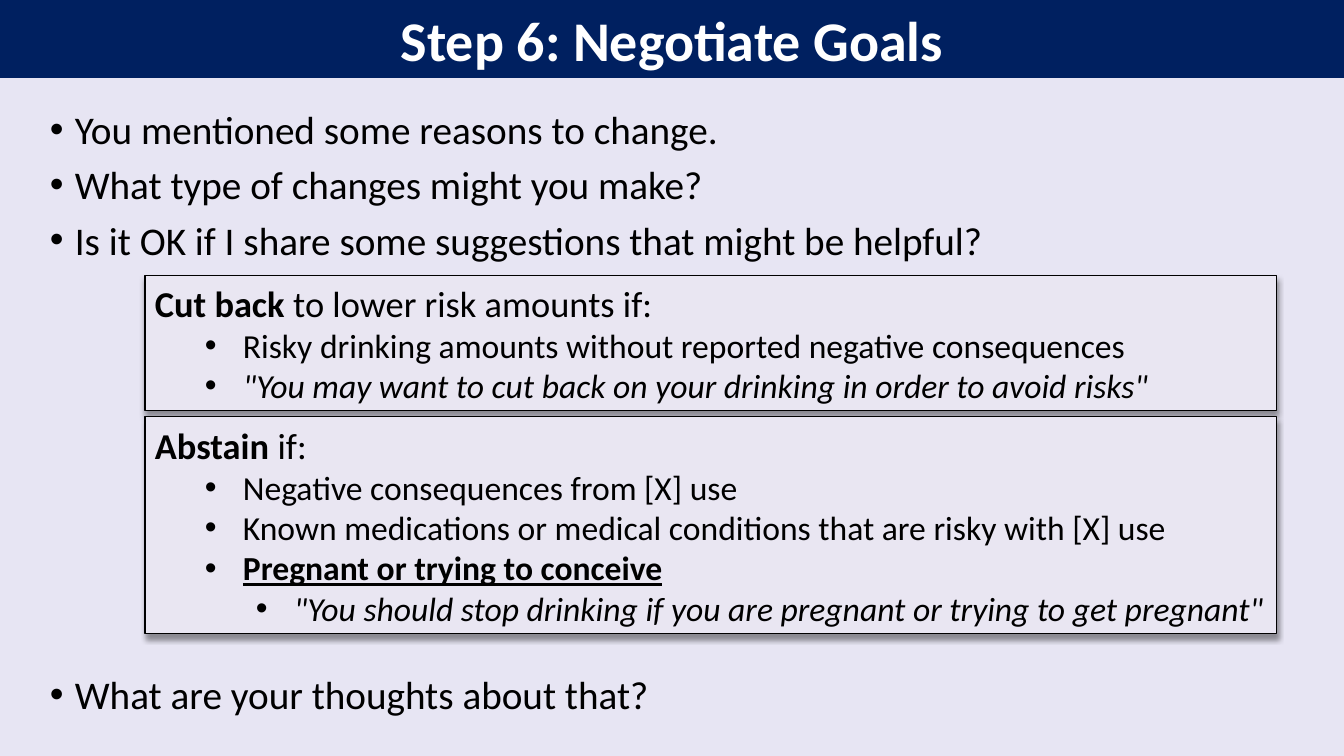
from lxml import etree
from pptx import Presentation
from pptx.dml.color import RGBColor
from pptx.enum.shapes import MSO_SHAPE
from pptx.enum.text import MSO_ANCHOR, MSO_AUTO_SIZE, PP_ALIGN
from pptx.oxml.ns import qn
from pptx.util import Pt

RECTANGLE = MSO_SHAPE.RECTANGLE
TOP, MIDDLE = MSO_ANCHOR.TOP, MSO_ANCHOR.MIDDLE
LEFT, CENTER = PP_ALIGN.LEFT, PP_ALIGN.CENTER
NO_FIT = MSO_AUTO_SIZE.NONE
TITLE_ONLY = 5
WIDTH, HEIGHT = 1344, 756
SCALE = 12192000 / WIDTH
FONT = "Calibri"
COLORS = {"page": "E7E5F3", "banner": "002060", "panel": "E9E6F2",
          "ink": "000000", "white": "FFFFFF"}
INDENTS = {1: (88, -38), 2: (139, -38)}
PROMPT_INDENT = (25, -25)


def px(length):
    return round(length * SCALE)


def color(name):
    return RGBColor.from_string(COLORS[name])


class GoalSlide:
    def __init__(self, deck):
        self.page = deck.slides.add_slide(deck.slide_layouts[TITLE_ONLY])
        background = self.page.background.fill
        background.solid()
        background.fore_color.rgb = color("page")

    def set_frame(self, box, anchor):
        frame = box.text_frame
        frame.word_wrap = True
        frame.auto_size = NO_FIT
        frame.vertical_anchor = anchor
        return frame

    def add_span(self, para, text, size, ink="ink", bold=False, italic=False, underline=False):
        span = para.add_run()
        span.text = text
        font = span.font
        font.name, font.size = FONT, Pt(size)
        font.bold, font.italic, font.underline = bold, italic, underline
        font.color.rgb = color(ink)

    def add_bullet(self, para, indent):
        margin, hanging = indent
        properties = para._p.get_or_add_pPr()
        properties.set("marL", str(px(margin)))
        properties.set("indent", str(px(hanging)))
        etree.SubElement(properties, qn("a:buFont"), typeface="Arial")
        etree.SubElement(properties, qn("a:buChar"), char="•")

    def add_shadow(self, box):
        box.shadow.inherit = False
        effects = box._element.spPr.find(qn("a:effectLst"))
        shadow = etree.SubElement(effects, qn("a:outerShdw"), blurRad=str(Pt(4)),
                                  dist=str(Pt(3)), dir="5400000", rotWithShape="0")
        tint = etree.SubElement(shadow, qn("a:srgbClr"), val=COLORS["ink"])
        etree.SubElement(tint, qn("a:alpha"), val="40000")

    def add_title(self, text, height):
        title = self.page.shapes.title
        title.left, title.top, title.width, title.height = 0, 0, px(WIDTH), px(height)
        title.fill.solid()
        title.fill.fore_color.rgb = color("banner")
        para = self.set_frame(title, MIDDLE).paragraphs[0]
        para.alignment = CENTER
        self.add_span(para, text, 40, "white", bold=True)

    def add_prompts(self, place, prompts, space_before, line_spacing=None):
        box = self.page.shapes.add_textbox(*map(px, place))
        frame = self.set_frame(box, TOP)
        for index, prompt in enumerate(prompts):
            para = frame.add_paragraph() if index else frame.paragraphs[0]
            para.space_before = Pt(space_before)
            para.line_spacing = line_spacing
            self.add_bullet(para, PROMPT_INDENT)
            self.add_span(para, prompt, 28)

    def add_panel(self, place, action, condition, points):
        box = self.page.shapes.add_shape(RECTANGLE, *map(px, place))
        box.fill.solid()
        box.fill.fore_color.rgb = color("panel")
        box.line.color.rgb = color("ink")
        box.line.width = Pt(0.75)
        self.add_shadow(box)
        frame = self.set_frame(box, MIDDLE)
        heading = frame.paragraphs[0]
        heading.alignment = LEFT
        self.add_span(heading, action, 26, bold=True)
        self.add_span(heading, condition, 26)
        for level, text, style in points:
            para = frame.add_paragraph()
            para.level = level
            para.alignment = LEFT
            self.add_bullet(para, INDENTS[level])
            self.add_span(para, text, 24, **style)


def main():
    deck = Presentation()
    deck.slide_width, deck.slide_height = px(WIDTH), px(HEIGHT)
    slide = GoalSlide(deck)
    slide.add_title("Step 6: Negotiate Goals", 78)
    slide.add_prompts((40, 100, 1223, 156), [
        "You mentioned some reasons to change.",
        "What type of changes might you make?",
        "Is it OK if I share some suggestions that might be helpful?",
    ], 6)
    slide.add_prompts((40, 656, 1162, 69), ["What are your thoughts about that?"], 9, 1.2)
    quote = {"italic": True}
    slide.add_panel((145, 275, 1132, 136), "Cut back ", "to lower risk amounts if:", [
        (1, "Risky drinking amounts without reported negative consequences", {}),
        (1, '"You may want to cut back on your drinking in order to avoid risks"', quote),
    ])
    slide.add_panel((145, 417, 1132, 217), "Abstain ", "if:", [
        (1, "Negative consequences from [X] use", {}),
        (1, "Known medications or medical conditions that are risky with [X] use", {}),
        (1, "Pregnant or trying to conceive", {"bold": True, "underline": True}),
        (2, '"You should stop drinking if you are pregnant or trying to get pregnant"', quote),
    ])
    deck.save("out.pptx")


if __name__ == "__main__":
    main()
